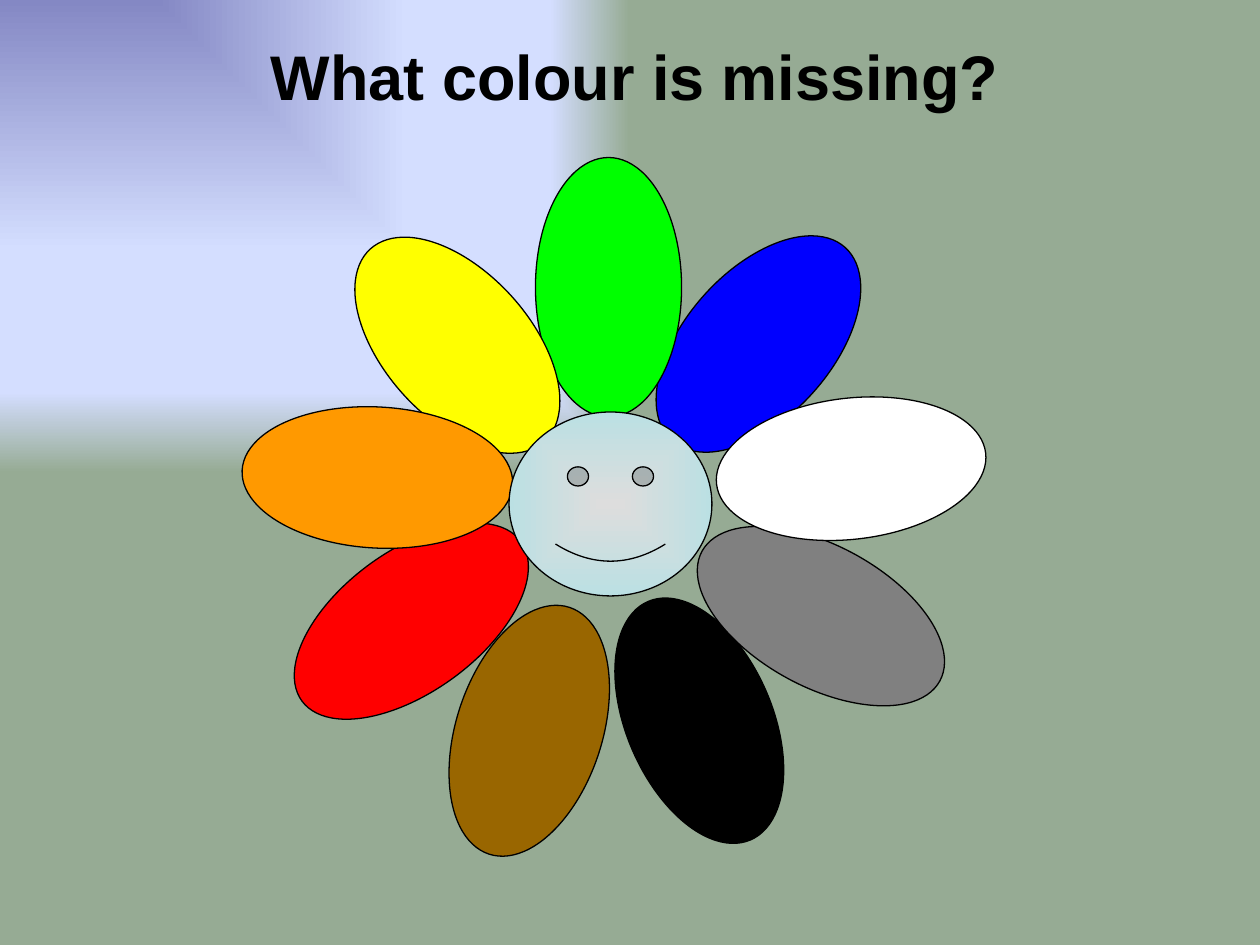
"""Build a slide with a smiling flower whose petals show nine colours."""
from lxml import etree
from pptx import Presentation
from pptx.dml.color import RGBColor
from pptx.enum.shapes import MSO_SHAPE
from pptx.enum.text import MSO_ANCHOR, PP_ALIGN
from pptx.oxml.ns import qn
from pptx.util import Inches, Pt

OVAL, SMILEY = MSO_SHAPE.OVAL, MSO_SHAPE.SMILEY_FACE
CENTER, TOP = PP_ALIGN.CENTER, MSO_ANCHOR.TOP

COLOURS = {
    "red": "FF0000", "brown": "996600", "blue": "0000FF",
    "green": "00FF00", "yellow": "FFFF00", "orange": "FF9900",
    "black": "000000", "grey": "808080", "white": "FFFFFF",
    "dusk": "8488C4", "sky": "D4DEFF", "meadow": "96AB94",
    "face centre": "DDDDDD", "face edge": "BBE0E3",
}
QUESTION = "What colour is missing?"
QUESTION_BOX = (1.79, 0.25, 6.5, 0.92)
WIDE, ROUND = (2.15, 1.12), (2.06, 1.16)
PETALS = [
    ("red", 2.19, 4.37, WIDE, 323.9),
    ("brown", 3.17, 5.22, ROUND, 108),
    ("blue", 4.99, 2.15, ROUND, 311.9),
    ("green", 3.8, 1.7, ROUND, 270),
    ("yellow", 2.6, 2.16, ROUND, 47.9),
    ("orange", 1.92, 3.23, WIDE, 3.1),
    ("black", 4.52, 5.14, ROUND, 66.8),
    ("grey", 5.44, 4.33, WIDE, 28.6),
    ("white", 5.68, 3.16, WIDE, 353.4),
]
FACE = (4.04, 3.27, 1.61, 1.46)
FACE_STOPS = [(0, "face centre"), (100, "face edge")]
SKY_STOPS = [(0, "dusk"), (53, "sky"), (83, "sky"), (100, "meadow")]


def rgb(colour):
    return RGBColor.from_string(COLOURS[colour])


def set_path_gradient(parent, stops, path, focus):
    solid = parent.find(qn("a:solidFill"))
    gradient = etree.Element(qn("a:gradFill"), rotWithShape="1")
    stop_list = etree.SubElement(gradient, qn("a:gsLst"))
    for position, colour in stops:
        stop = etree.SubElement(stop_list, qn("a:gs"), pos=str(position * 1000))
        etree.SubElement(stop, qn("a:srgbClr"), val=COLOURS[colour])
    outline = etree.SubElement(gradient, qn("a:path"), path=path)
    sides = {side: str(share * 1000) for side, share in zip("ltrb", focus)}
    etree.SubElement(outline, qn("a:fillToRect"), **sides)
    parent.replace(solid, gradient)


def add_flower_part(slide, preset, box, colour, rotation=0):
    part = slide.shapes.add_shape(preset, *map(Inches, box))
    part.rotation = rotation
    part.shadow.inherit = False
    part.fill.solid()
    part.fill.fore_color.rgb = rgb(colour)
    part.line.color.rgb = rgb("black")
    part.line.width = Pt(0.75)
    return part


def add_text(slide, text, box, size, colour, font="Arial", bold=False):
    frame = slide.shapes.add_textbox(*map(Inches, box)).text_frame
    frame.word_wrap = True
    frame.vertical_anchor = TOP
    paragraph = frame.paragraphs[0]
    paragraph.alignment = CENTER
    run = paragraph.add_run()
    run.text = text
    run.font.name = font
    run.font.size = Pt(size)
    run.font.bold = bold
    run.font.color.rgb = rgb(colour)


def main():
    deck = Presentation()
    deck.slide_width, deck.slide_height = Inches(10), Inches(7.5)
    slide = deck.slides.add_slide(deck.slide_layouts[6])

    slide.background.fill.solid()
    backdrop = slide.element.find(".//" + qn("p:bgPr"))
    set_path_gradient(backdrop, SKY_STOPS, "rect", (0, 0, 100, 100))

    for colour, left, top, size, rotation in PETALS:
        add_flower_part(slide, OVAL, (left, top, *size), colour, rotation)

    face = add_flower_part(slide, SMILEY, FACE, "face edge")
    face.adjustments[0] = 0.047
    face_format = face.element.find(qn("p:spPr"))
    set_path_gradient(face_format, FACE_STOPS, "shape", (50, 50, 50, 50))

    add_text(slide, QUESTION, QUESTION_BOX, size=36, colour="black", bold=True)
    deck.save("out.pptx")


if __name__ == "__main__":
    main()
